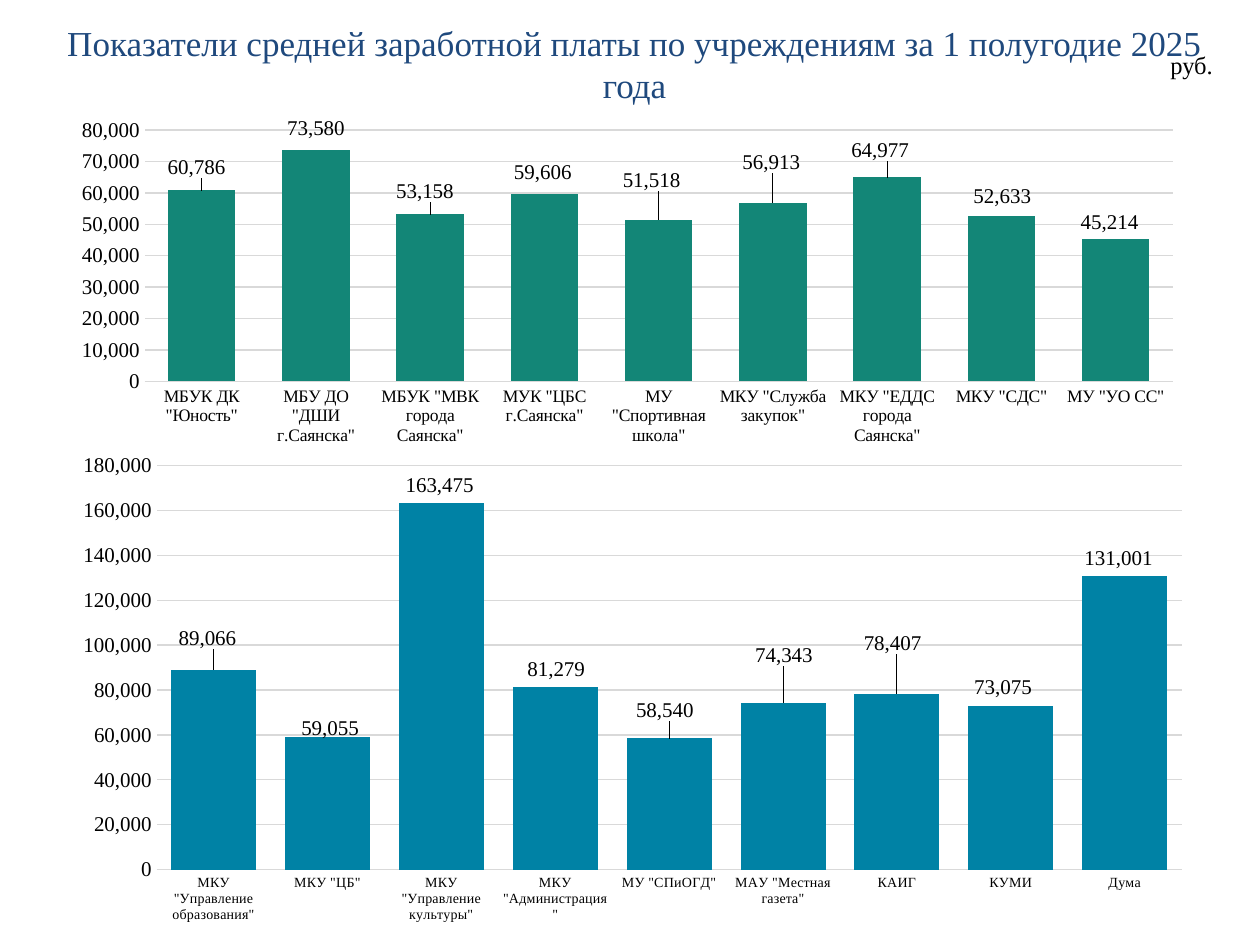
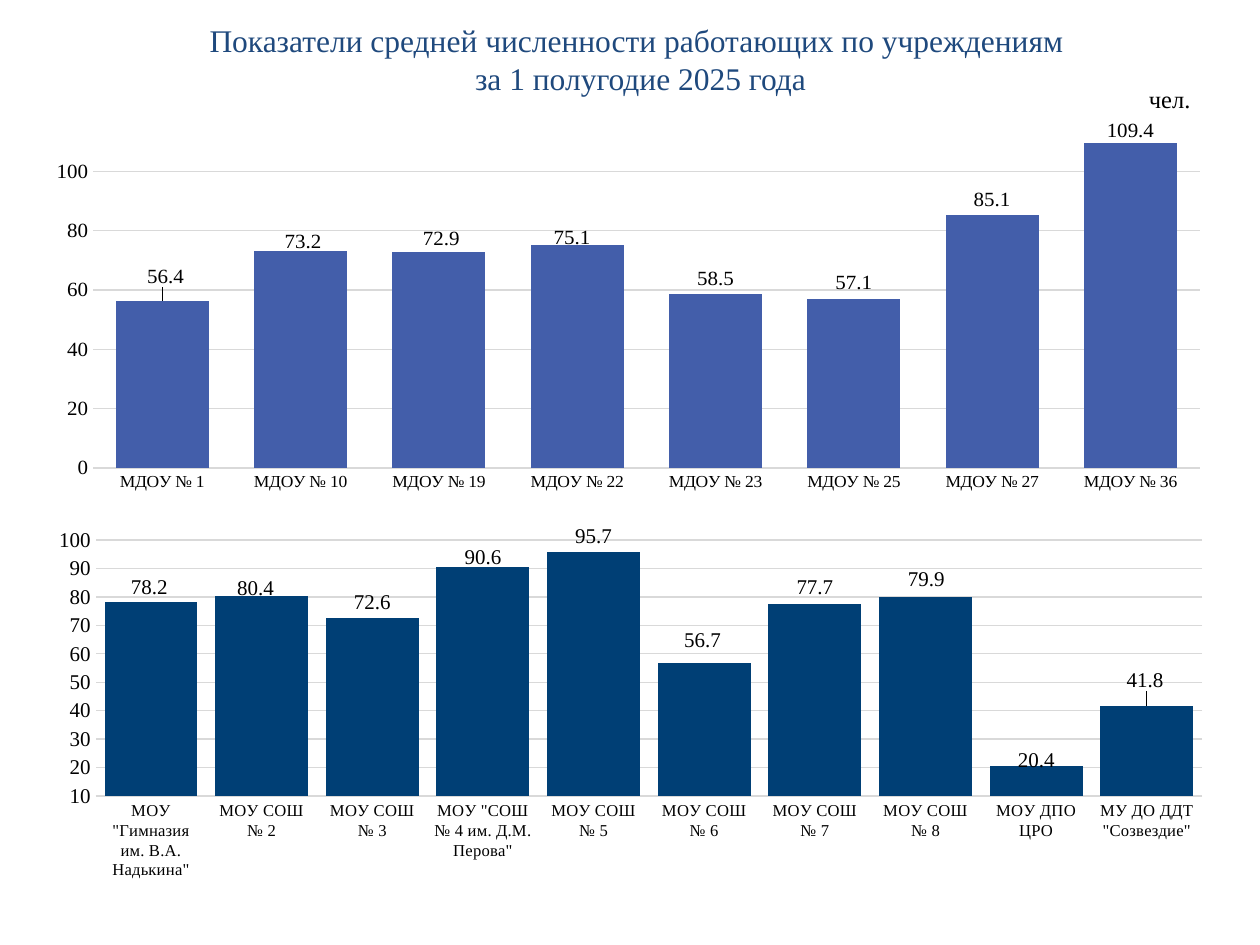
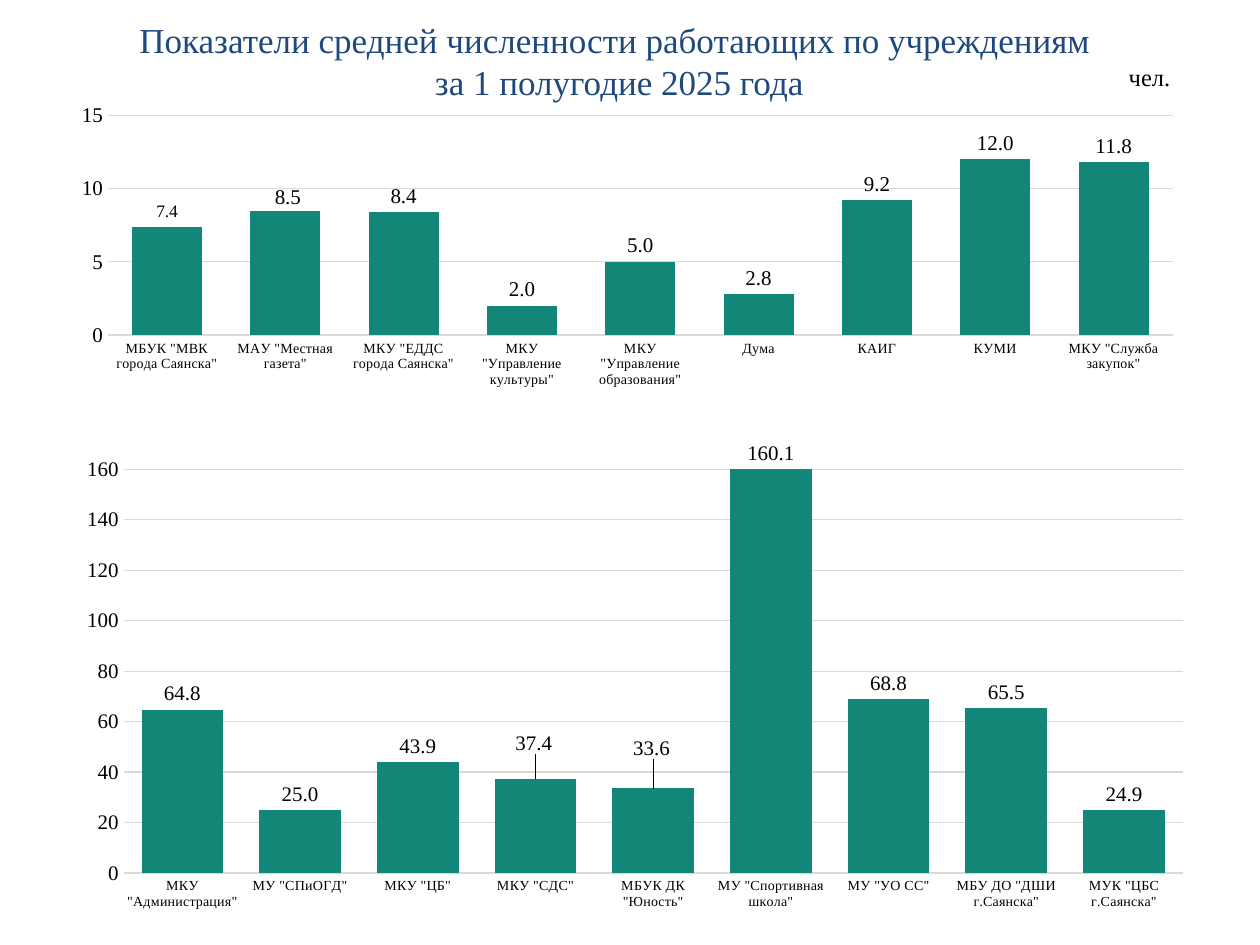
from lxml import etree
from pptx import Presentation
from pptx.chart.data import CategoryChartData
from pptx.dml.color import RGBColor
from pptx.enum.chart import XL_CHART_TYPE, XL_LABEL_POSITION, XL_TICK_MARK
from pptx.enum.text import PP_ALIGN
from pptx.oxml import parse_xml
from pptx.oxml.ns import nsdecls, qn
from pptx.util import Pt

COLUMN = XL_CHART_TYPE.COLUMN_CLUSTERED
OUTSIDE = XL_LABEL_POSITION.OUTSIDE_END
NO_TICK = XL_TICK_MARK.NONE
CENTER, LEFT = PP_ALIGN.CENTER, PP_ALIGN.LEFT

NAVY = RGBColor(0x1F, 0x49, 0x7D)
BLACK = RGBColor(0, 0, 0)
WHITE = RGBColor(0xFF, 0xFF, 0xFF)
GREY = RGBColor(0xD9, 0xD9, 0xD9)
GREEN = RGBColor(0x13, 0x86, 0x77)
TEAL = RGBColor(0x00, 0x82, 0xA5)
BLUE = RGBColor(0x43, 0x5E, 0xAA)
DEEP = RGBColor(0x00, 0x3F, 0x75)
SERIF = "Times New Roman"
WHOLE, TENTH = "#,##0", "#,##0.0"

STAFF = ["Показатели средней численности работающих по учреждениям ",
         "за 1 полугодие 2025 года"]

# Slides: title and unit with their boxes, then the charts.
# "shifts" moves labels by point number, in points from the bar end.
SLIDES = [
    dict(
        title=["Показатели средней заработной платы по учреждениям за 1 полугодие 2025 года"],
        title_box=(20.2, 8.6, 684.7, 55.4), size=20,
        unit="руб.", unit_box=(661.7, 25.2, 43.2, 24.5),
        charts=[
            dict(box=(33.8, 64.1, 649.4, 194.4), color=GREEN, gap=69, cat_size=10,
                 low=0, high=80000, fmt=WHOLE,
                 data={'МБУК ДК "Юность"': 60786, 'МБУ ДО "ДШИ г.Саянска"': 73580,
                       'МБУК "МВК города Саянска"': 53158, 'МУК "ЦБС г.Саянска"': 59606,
                       'МУ "Спортивная школа"': 51518, 'МКУ "Служба закупок"': 56913,
                       'МКУ "ЕДДС города Саянска"': 64977, 'МКУ "СДС"': 52633,
                       'МУ "УО СС"': 45214},
                 shifts={0: (-3, -4), 1: (0, -3.5), 2: (-3, -4), 3: (-1, -3.5),
                         4: (-4, -13), 5: (-1, -14), 6: (-4, -6), 7: (0.5, -2),
                         8: (-3.5, -0.5)}),
            dict(box=(36.7, 252.7, 652.3, 277.9), color=TEAL, gap=34, cat_size=8, fmt=WHOLE,
                 plot=(0.081, 0.048, 0.898, 0.831),
                 data={'МКУ "Управление образования"': 89066, 'МКУ "ЦБ"': 59055,
                       'МКУ "Управление культуры"': 163475, 'МКУ "Администрация"': 81279,
                       'МУ "СПиОГД"': 58540, 'МАУ "Местная газета"': 74343,
                       'КАИГ': 78407, 'КУМИ': 73075, 'Дума': 131001},
                 shifts={0: (-3.5, -8.5), 1: (1.5, 4), 2: (-1, -0.5), 3: (0.5, -1),
                         4: (-2.5, -6.5), 5: (0.5, -18), 6: (-2.5, -19.5),
                         7: (-4.5, -1.5), 8: (-3.5, -0.5)}),
        ]),
    dict(
        title=STAFF, title_box=(62.6, 8.6, 607, 51.1), size=18,
        unit="чел.", unit_box=(649.4, 44.6, 39.6, 24.5),
        charts=[
            dict(box=(18.7, 68.4, 680.4, 216.7), color=BLUE, gap=49, cat_size=10,
                 low=0, high=110, fmt=TENTH,
                 data={'МДОУ № 1': 56.4, 'МДОУ № 10': 73.2, 'МДОУ № 19': 72.9,
                       'МДОУ № 22': 75.1, 'МДОУ № 23': 58.5, 'МДОУ № 25': 57.1,
                       'МДОУ № 27': 85.1, 'МДОУ № 36': 109.4},
                 shifts={0: (2, -5), 1: (1.5, 4), 2: (1.5, 1.5), 3: (-3, 4.5), 7: (0, 1.5)}),
            dict(box=(20.2, 298.1, 680.4, 208.8), color=DEEP, gap=19, cat_size=9.5,
                 low=10, high=100, step=10, fmt=TENTH,
                 data={'МОУ "Гимназия им. В.А. Надькина"': 78.2, 'МОУ СОШ № 2': 80.4,
                       'МОУ СОШ № 3': 72.6, 'МОУ "СОШ № 4 им. Д.М. Перова"': 90.6,
                       'МОУ СОШ № 5': 95.7, 'МОУ СОШ № 6': 56.7, 'МОУ СОШ № 7': 77.7,
                       'МОУ СОШ № 8': 79.9, 'МОУ ДПО ЦРО': 20.4,
                       'МУ ДО ДДТ "Созвездие"': 41.8},
                 shifts={0: (-1, 0.5), 1: (-3.5, 5), 3: (0, 3.5), 5: (-1, -4),
                         7: (0.5, -1), 8: (0, 5.5), 9: (-1, -5.5)}),
        ]),
    dict(
        title=STAFF, title_box=(25.2, 7.2, 657.4, 55.4), size=20,
        unit="чел.", unit_box=(637.9, 31.7, 39.6, 24.5),
        charts=[
            dict(box=(33.8, 56.2, 649.4, 168.5), color=GREEN, gap=69, cat_size=8,
                 low=0, high=15, step=5, fmt=TENTH,
                 data={'МБУК "МВК города Саянска"': 7.4, 'МАУ "Местная газета"': 8.5,
                       'МКУ "ЕДДС города Саянска"': 8.4, 'МКУ "Управление культуры"': 2,
                       'МКУ "Управление образования"': 5, 'Дума': 2.8, 'КАИГ': 9.2,
                       'КУМИ': 12, 'МКУ "Служба закупок"': 11.8},
                 shifts={0: (0, 0), 1: (1.5, 1.5)}, sizes={0: 10}),
            dict(box=(36.7, 252.7, 652.3, 272.2), color=GREEN, gap=44, cat_size=8,
                 low=0, high=161, fmt=TENTH,
                 data={'МКУ "Администрация"': 64.8, 'МУ "СПиОГД"': 25, 'МКУ "ЦБ"': 43.9,
                       'МКУ "СДС"': 37.4, 'МБУК ДК "Юность"': 33.6,
                       'МУ "Спортивная школа"': 160.1, 'МУ "УО СС"': 68.8,
                       'МБУ ДО "ДШИ г.Саянска"': 65.5, 'МУК "ЦБС г.Саянска"': 24.9},
                 shifts={3: (-1, -11), 4: (-1, -14)}),
        ]),
]


def style(font, size, color=BLACK):
    font.name, font.size, font.color.rgb = SERIF, Pt(size), color


def layout(**parts):
    node = parse_xml(f"<c:layout {nsdecls('c')}><c:manualLayout/></c:layout>")
    for tag, val in parts.items():
        etree.SubElement(node[0], qn(f"c:{tag}")).set("val", str(val))
    return node


prs = Presentation()
prs.slide_width, prs.slide_height = Pt(720), Pt(540)

for page in SLIDES:
    slide = prs.slides.add_slide(prs.slide_layouts[6])
    slide.background.fill.solid()
    slide.background.fill.fore_color.rgb = WHITE

    for item in page["charts"]:
        # Chart and bars
        data = CategoryChartData(number_format=item["fmt"])
        data.categories = list(item["data"])
        data.add_series("Series 1", list(item["data"].values()))
        box = [Pt(n) for n in item["box"]]
        chart = slide.shapes.add_chart(COLUMN, *box, data).chart
        chart.has_legend = chart.has_title = False
        chart.font.name, chart.font.size = "Calibri", Pt(10)
        plot = chart.plots[0]
        plot.gap_width, plot.overlap = item["gap"], -27
        plot.vary_by_categories = False
        bars = plot.series[0]
        bars.format.fill.solid()
        bars.format.fill.fore_color.rgb = item["color"]

        # Axes
        cat, val = chart.category_axis, chart.value_axis
        for axis, size in ((cat, item["cat_size"]), (val, 12)):
            axis.major_tick_mark = axis.minor_tick_mark = NO_TICK
            style(axis.tick_labels.font, size)
        val.tick_labels.number_format = WHOLE
        val.tick_labels.number_format_is_linked = False
        val.minimum_scale, val.maximum_scale = item.get("low"), item.get("high")
        val.major_unit = item.get("step")
        val.format.line.fill.background()
        for line in (cat.format.line, val.major_gridlines.format.line):
            line.color.rgb, line.width = GREY, Pt(0.75)

        # Value labels
        marks = bars.data_labels
        marks.show_value, marks.position = True, OUTSIDE
        marks.number_format, marks.number_format_is_linked = item["fmt"], False
        style(marks.font, 12)
        wide, high = item["box"][2:]
        for num, (dx, dy) in item["shifts"].items():
            label = bars.points[num].data_label
            style(label.font, item.get("sizes", {}).get(num, 12))
            label.position = OUTSIDE
            node = bars._element.xpath(f"c:dLbls/c:dLbl[c:idx/@val='{num}']")[0]
            node.insert(1, layout(x=round(dx / wide, 4), y=round(dy / high, 4)))
            node.insert(2, parse_xml(f'<c:numFmt {nsdecls("c")} formatCode="{item["fmt"]}" '
                                     'sourceLinked="0"/>'))

        # Fixed plot area
        if "plot" in item:
            x, y, w, h = item["plot"]
            area = chart._chartSpace.chart.plotArea
            for old in area.findall(qn("c:layout")):
                area.remove(old)
            area.insert(0, layout(layoutTarget="inner", xMode="edge", yMode="edge",
                                  x=x, y=y, w=w, h=h))

    # Title and unit
    for lines, place, size, color, align in (
            (page["title"], page["title_box"], page["size"], NAVY, CENTER),
            ([page["unit"]], page["unit_box"], 14, BLACK, LEFT)):
        frame = slide.shapes.add_textbox(*[Pt(n) for n in place]).text_frame
        frame.word_wrap = align == CENTER
        frame.text = "\n".join(lines)
        for para in frame.paragraphs:
            para.alignment = align
            style(para.runs[0].font, size, color)

prs.save("out.pptx")
